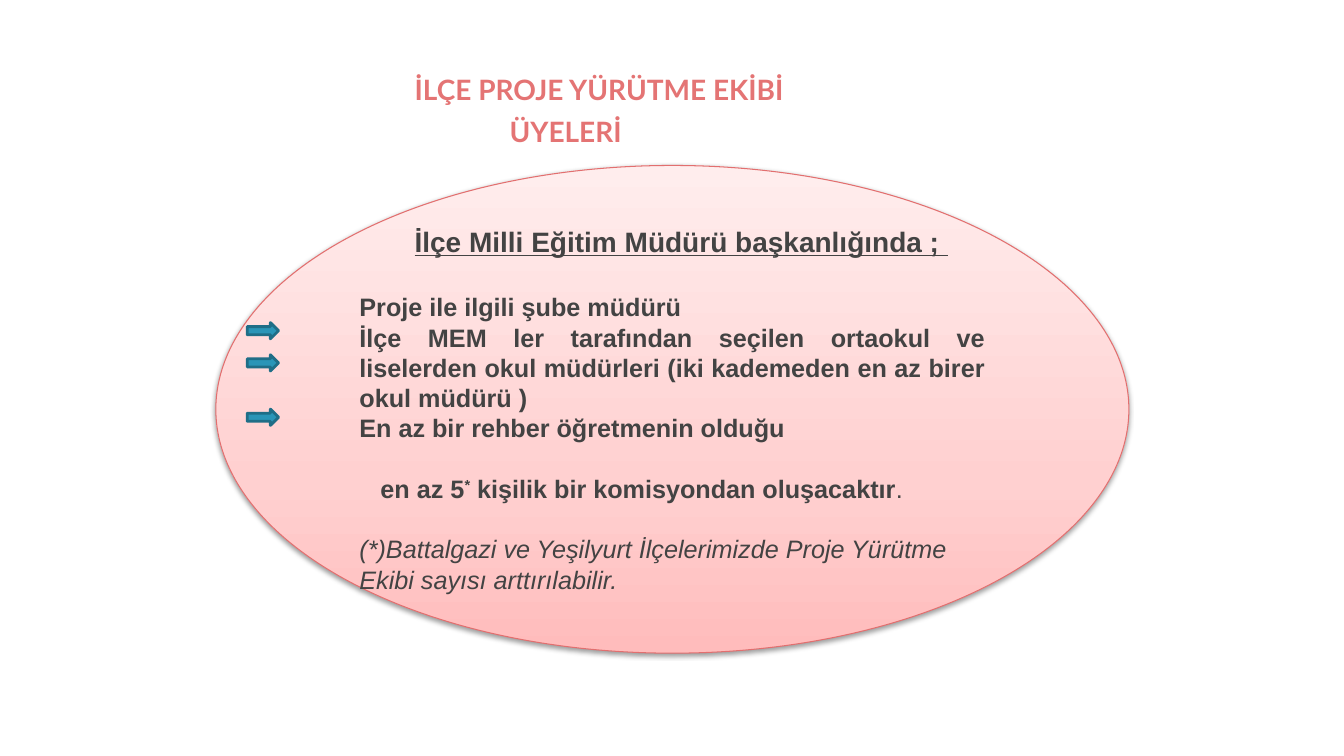
from dataclasses import dataclass

from lxml.etree import SubElement
from pptx import Presentation
from pptx.dml.color import RGBColor
from pptx.enum.shapes import MSO_SHAPE
from pptx.enum.text import MSO_ANCHOR, MSO_AUTO_SIZE, PP_ALIGN
from pptx.oxml import parse_xml
from pptx.oxml.ns import qn
from pptx.util import Cm, Pt


@dataclass(frozen=True)
class Theme:
    title_font: str = "Lato"
    body_font: str = "Arial"
    title: str = "E47474"
    text: str = "434343"
    rim: str = "E26F6F"
    arrow: str = "2A95B7"
    arrow_rim: str = "1F6E87"
    shadow: str = "000000"
    gradient: tuple = ((0, "FFBCBC"), (35, "FFD0D0"), (100, "FFEDED"))
    large: float = 20
    normal: float = 18
    leading: float = 1.2


T = Theme()
A = "http://schemas.openxmlformats.org/drawingml/2006/main"


def add_run(p, text, size=T.normal, font=T.body_font, color=T.text,
            bold=True, italic=False, underline=False, baseline=0):
    r = p.add_run()
    r.text = text
    f = r.font
    f.size, f.name, f.bold = Pt(size), font, bold
    f.italic, f.underline = italic, underline
    f.color.rgb = RGBColor.from_string(color)
    if baseline:
        r._r.get_or_add_rPr().set("baseline", str(baseline * 1000))


def add_paragraph(tf, first, runs, indent=0, before=0, size=T.normal,
                  align=PP_ALIGN.JUSTIFY, **fmt):
    p = tf.paragraphs[0] if first else tf.add_paragraph()
    p.alignment = align
    p.line_spacing = Pt(size * T.leading)
    p.space_before = Pt(before)
    pPr = p._p.get_or_add_pPr()
    pPr.set("marL", "0")
    pPr.set("indent", str(Cm(indent)))
    for text, extra in runs:
        add_run(p, text, size=size, **{**fmt, **extra})


def set_line(sp, color, width):
    sp.line.color.rgb = RGBColor.from_string(color)
    sp.line.width = Pt(width)
    sp.shadow.inherit = False


def add_title(s, x, y, w, h):
    sp = s.shapes.title
    sp.left, sp.top, sp.width, sp.height = Cm(x), Cm(y), Cm(w), Cm(h)
    tf = sp.text_frame
    tf.word_wrap = True
    tf.auto_size = MSO_AUTO_SIZE.NONE
    tf.vertical_anchor = MSO_ANCHOR.TOP
    tf.margin_left = tf.margin_right = tf.margin_top = tf.margin_bottom = Cm(0.25)
    lines = (("İLÇE PROJE YÜRÜTME EKİBİ", 5.17, 0), ("ÜYELERİ", 7.56, 6))
    for i, (text, indent, before) in enumerate(lines):
        add_paragraph(tf, i == 0, [(text, {})], indent, before, T.large,
                      PP_ALIGN.LEFT, font=T.title_font, color=T.title)


def style_ellipse(sp):
    set_line(sp, T.rim, 0.75)
    stops = "".join(f'<a:gs pos="{pos * 1000}"><a:srgbClr val="{color}"/></a:gs>'
                    for pos, color in T.gradient)
    spPr = sp._element.spPr
    spPr.find(qn("a:ln")).addprevious(parse_xml(
        f'<a:gradFill xmlns:a="{A}" rotWithShape="1"><a:gsLst>{stops}</a:gsLst>'
        '<a:lin ang="16200000" scaled="0"/></a:gradFill>'))
    shadow = SubElement(spPr.find(qn("a:effectLst")), qn("a:outerShdw"),
                        blurRad=str(Pt(3.1)), dist=str(Pt(1.6)),
                        dir="5400000", rotWithShape="0")
    color = SubElement(shadow, qn("a:srgbClr"), val=T.shadow)
    SubElement(color, qn("a:alpha"), val="38000")


def add_members(s, x, y, w, h):
    sp = s.shapes.add_shape(MSO_SHAPE.OVAL, Cm(x), Cm(y), Cm(w), Cm(h))
    style_ellipse(sp)
    tf = sp.text_frame
    tf.word_wrap = True
    tf.vertical_anchor = MSO_ANCHOR.MIDDLE
    large_gap, gap = T.large * T.leading, T.normal * T.leading
    paragraphs = (
        ([("İlçe Milli Eğitim Müdürü başkanlığında ; ", {"underline": True})],
         {"indent": 1.39, "size": T.large}),
        ([("Proje ile ilgili şube müdürü", {})], {"before": large_gap}),
        ([("İlçe MEM ler tarafından seçilen ortaokul ve liselerden okul "
           "müdürleri (iki kademeden en az birer okul müdürü )", {})], {}),
        ([("En az bir rehber öğretmenin olduğu", {})], {}),
        ([("en az 5", {}), ("*", {"baseline": 30}),
          (" kişilik bir komisyondan oluşacaktır", {}), (".", {"bold": False})],
         {"indent": 0.53, "before": gap}),
        ([("(*)Battalgazi ve Yeşilyurt İlçelerimizde Proje Yürütme Ekibi "
           "sayısı arttırılabilir.", {"bold": False, "italic": True})],
         {"before": gap, "align": PP_ALIGN.LEFT}),
    )
    for i, (runs, fmt) in enumerate(paragraphs):
        add_paragraph(tf, i == 0, runs, **fmt)


def add_arrows(s, x, y, w, h, offsets):
    for dy in offsets:
        sp = s.shapes.add_shape(MSO_SHAPE.RIGHT_ARROW, Cm(x), Cm(y + dy), Cm(w), Cm(h))
        sp.fill.solid()
        sp.fill.fore_color.rgb = RGBColor.from_string(T.arrow)
        set_line(sp, T.arrow_rim, 2)


def main():
    prs = Presentation()
    prs.slide_width, prs.slide_height = Cm(33.87), Cm(19.05)
    s = prs.slides.add_slide(prs.slide_layouts[5])
    add_title(s, 5.03, 1.57, 26.01, 2.5)
    x, y = 5.44, 4.17
    add_members(s, x, y, 23.01, 12.29)
    add_arrows(s, x + 0.79, y + 3.96, 0.79, 0.41, (0, 0.81, 2.18))
    prs.save("out.pptx")


if __name__ == "__main__":
    main()
